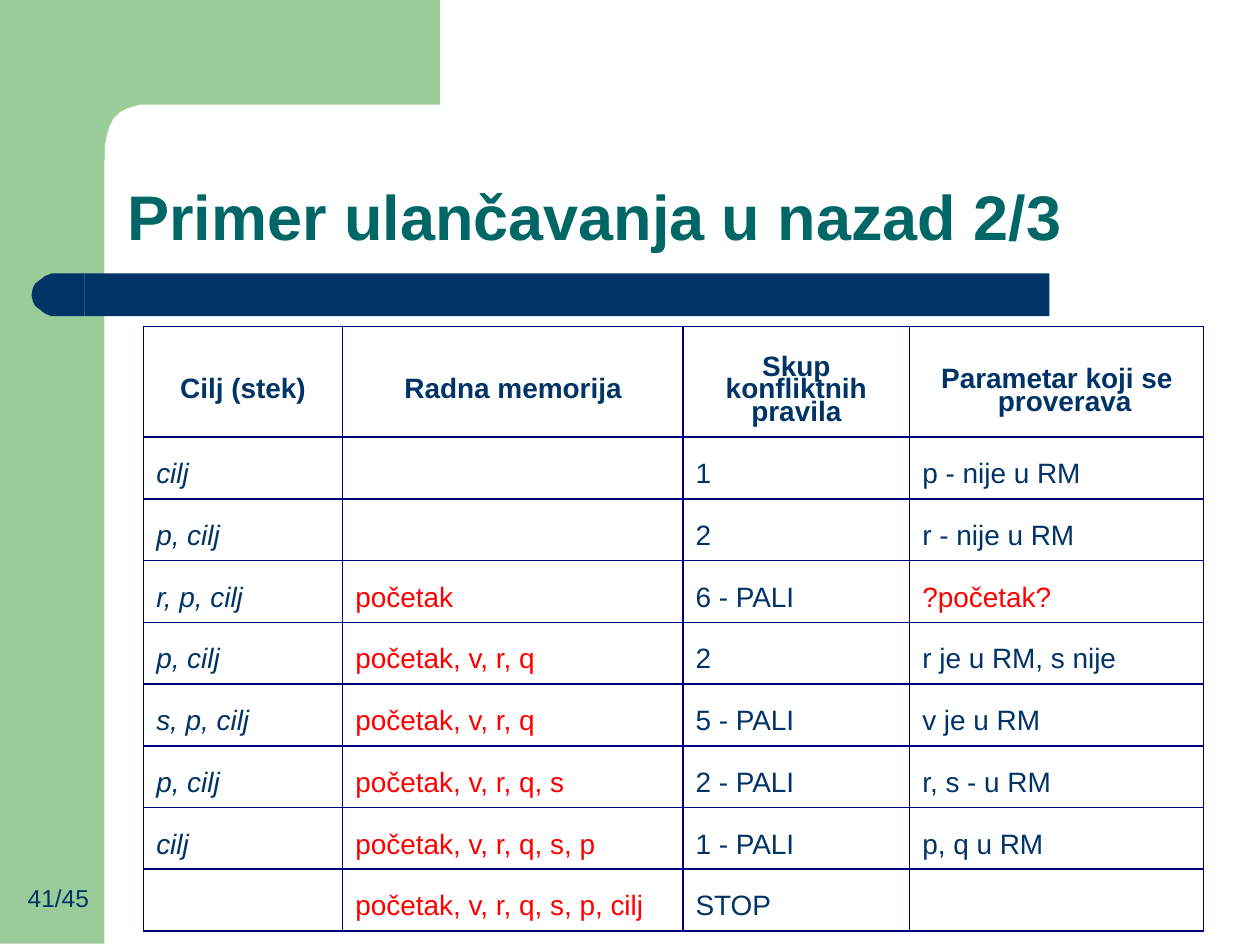
import pptx
import pptx.dml.color
import pptx.enum.shapes
import pptx.enum.text
import pptx.oxml
import pptx.oxml.ns
import pptx.util

Inches = pptx.util.Inches
Pt = pptx.util.Pt
Align = pptx.enum.text.PP_ALIGN

GREEN, NAVY, TEAL, RED, GRID = "99CC99", "003366", "006666", "FF0000", "00007F"

CORNER = [(299, 0), (0, 0), (0, 127), (33, 127), (33, 115), (34, 112), (35, 106), (37, 100),
          (40, 94), (45, 89), (51, 86), (61, 83), (299, 83)]
CAP_TOP = [(42, 0), (21, 0), (16, 0), (11, 2), (7, 5), (3, 8), (1, 12), (0, 17)]
CAP = CAP_TOP + [(x, 34 - y) for x, y in reversed(CAP_TOP[:-1])]

COLUMNS = [1.58, 2.7, 1.8, 2.33]
HEADER_HEIGHT, ROW_HEIGHT = 0.88, 0.49
THICK_ROW_EDGES, THICK_COLUMN_EDGES = (6, 9), (2,)
HEADERS = [
    ("Cilj (stek)", 0.37, dict(indent=0.29)),
    ("Radna memorija", 0.37, dict(indent=0.49)),
    ("Skup konfliktnih pravila", 0.25,
     dict(indent=0.2, right=0.2, align=Align.CENTER, spacing=0.73)),
    ("Parametar koji se proverava", 0.35, dict(indent=0.7, first=-0.45, spacing=0.73)),
]
STEPS = [
    ("cilj", "", "1", "p - nije u RM"),
    ("p, cilj", "", "2", "r - nije u RM"),
    ("r, p, cilj", "početak", "6 - PALI", "?početak?"),
    ("p, cilj", "početak, v, r, q", "2", "r je u RM, s nije"),
    ("s, p, cilj", "početak, v, r, q", "5 - PALI", "v je u RM"),
    ("p, cilj", "početak, v, r, q, s", "2 - PALI", "r, s - u RM"),
    ("cilj", "početak, v, r, q, s, p", "1 - PALI", "p, q u RM"),
    ("", "početak, v, r, q, s, p, cilj", "STOP", ""),
]


def color(value):
    return pptx.dml.color.RGBColor.from_string(value)


def write(frame, text, size=16, fill=NAVY, bold=False, italic=False,
          align=Align.LEFT, indent=0, first=0, right=0, spacing=None):
    frame.word_wrap = True
    paragraph = frame.paragraphs[0]
    paragraph.alignment = align
    if spacing:
        paragraph.line_spacing = spacing
    properties = paragraph._p.get_or_add_pPr()
    for name, length in (("marL", indent), ("indent", first), ("marR", right)):
        properties.set(name, str(Inches(length)))
    run = paragraph.add_run()
    run.text = text
    font = run.font
    font.name, font.size, font.bold, font.italic = "Arial", Pt(size), bold, italic
    font.color.rgb = color(fill)


def text_box(slide, box, text, top=0, **style):
    frame = slide.shapes.add_textbox(*map(Inches, box)).text_frame
    frame.margin_left = frame.margin_right = frame.margin_bottom = 0
    frame.margin_top = Inches(top)
    write(frame, text, **style)


def paint(shape, fill):
    shape.shadow.inherit = False
    shape.fill.solid()
    shape.fill.fore_color.rgb = color(fill)
    shape.line.fill.background()


def rectangle(slide, box, fill):
    kind = pptx.enum.shapes.MSO_SHAPE.RECTANGLE
    paint(slide.shapes.add_shape(kind, *map(Inches, box)), fill)


def outline(slide, left, top, points, fill):
    builder = slide.shapes.build_freeform(*points[0], scale=Inches(0.01))
    builder.add_line_segments(points[1:], close=True)
    paint(builder.convert_to_shape(Inches(left), Inches(top)), fill)


def backdrop(slide):
    rectangle(slide, (0, 0, 0.83, 7.49), GREEN)
    outline(slide, 0.5, 0, CORNER, GREEN)


def title_bar(slide, left, top, width, height):
    cap = CAP[0][0] / 100
    rectangle(slide, (left + cap, top, width - cap, height), NAVY)
    outline(slide, left, top, CAP, NAVY)


def set_borders(cell, row, column):
    properties = cell._tc.get_or_add_tcPr()
    edges = [("L", column in THICK_COLUMN_EDGES), ("R", column + 1 in THICK_COLUMN_EDGES),
             ("T", row in THICK_ROW_EDGES), ("B", row + 1 in THICK_ROW_EDGES)]
    for position, (side, thick) in enumerate(edges):
        width = Pt(1.5 if thick else 1)
        properties.insert(position, pptx.oxml.parse_xml(
            f'<a:ln{side} {pptx.oxml.ns.nsdecls("a")} w="{width}">'
            f'<a:solidFill><a:srgbClr val="{GRID}"/></a:solidFill></a:ln{side}>'))


def fill_cell(cell, row, column):
    cell.fill.background()
    set_borders(cell, row, column)
    cell.margin_left = cell.margin_right = cell.margin_bottom = 0
    if row == 0:
        text, top, style = HEADERS[column]
        style = dict(style, bold=True)
    else:
        text, top = STEPS[row - 1][column], 0.17
        red = column == 1 or text.startswith("?")
        style = dict(indent=0.1, italic=column == 0, fill=RED if red else NAVY)
    cell.margin_top = Inches(top)
    write(cell.text_frame, text, **style)


def steps_table(slide, left, top):
    rows = len(STEPS) + 1
    height = HEADER_HEIGHT + ROW_HEIGHT * len(STEPS)
    box = map(Inches, (left, top, sum(COLUMNS), height))
    table = slide.shapes.add_table(rows, len(COLUMNS), *box).table
    table.first_row = table.horz_banding = False
    for column, width in enumerate(COLUMNS):
        table.columns[column].width = Inches(width)
    for row in range(rows):
        table.rows[row].height = Inches(ROW_HEIGHT if row else HEADER_HEIGHT)
        for column in range(len(COLUMNS)):
            fill_cell(table.cell(row, column), row, column)


def main():
    presentation = pptx.Presentation()
    presentation.slide_width, presentation.slide_height = Inches(10), Inches(7.5)
    slide = presentation.slides.add_slide(presentation.slide_layouts[6])
    backdrop(slide)
    title_bar(slide, 0.25, 2.17, 8.08, 0.34)
    text_box(slide, (1, 1.34, 7.45, 0.63), "Primer ulančavanja u nazad 2/3",
             top=0.07, size=36, fill=TEAL, bold=True, indent=0.01)
    text_box(slide, (0.19, 7.01, 0.53, 0.25), "41/45", size=14, indent=0.03,
             spacing=Pt(16.4))
    steps_table(slide, 1.14, 2.59)
    presentation.save("out.pptx")


if __name__ == "__main__":
    main()
